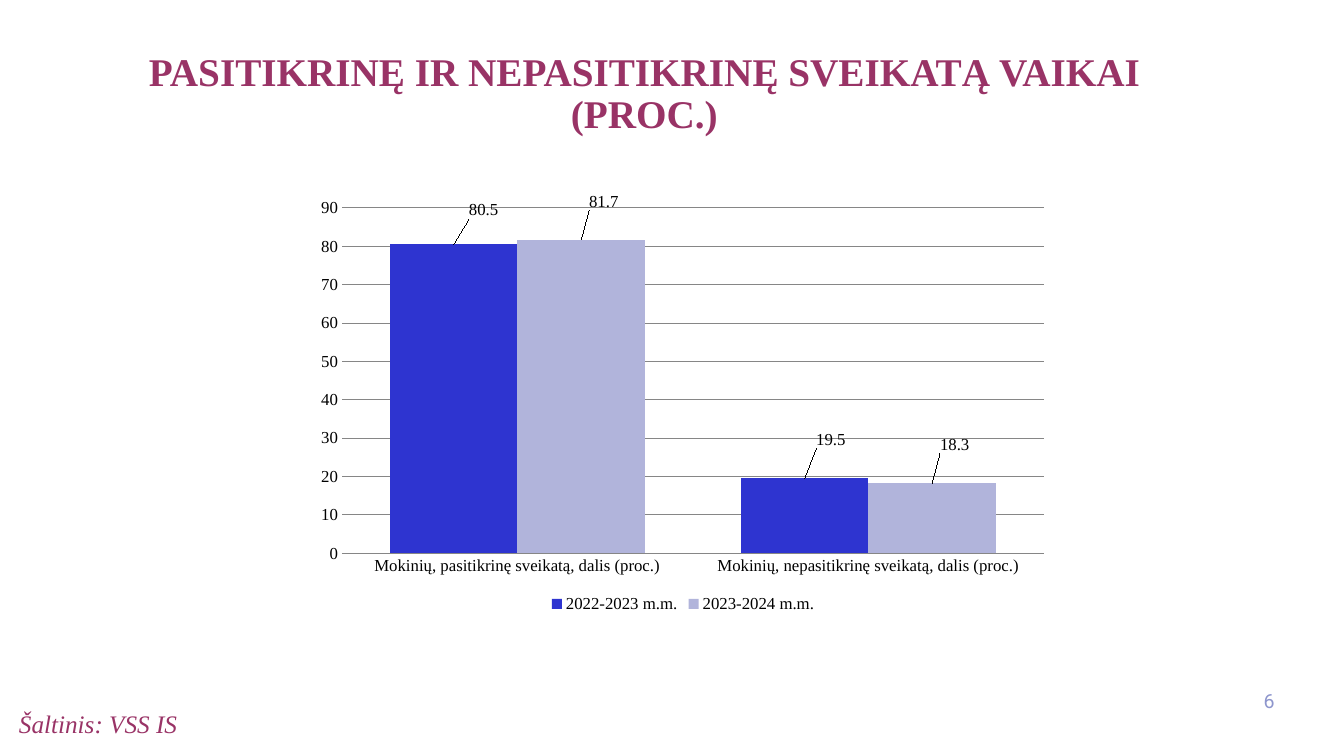
from lxml.etree import SubElement
from pptx import Presentation
from pptx.chart.data import CategoryChartData
from pptx.dml.color import RGBColor
from pptx.enum.chart import (XL_CHART_TYPE, XL_LABEL_POSITION,
                             XL_LEGEND_POSITION, XL_TICK_MARK)
from pptx.enum.text import PP_ALIGN
from pptx.oxml.ns import qn
from pptx.util import Inches, Pt

COLORS = {"plum": "993366", "page": "8E96CD", "text": "000000",
          "grid": "868686", "blue": "2E34D0", "pale": "B1B4DB"}
SERIF = "Times New Roman"
CATS = ["Mokinių, pasitikrinę sveikatą, dalis (proc.)",
        "Mokinių, nepasitikrinę sveikatą, dalis (proc.)"]
# name, colour, values, label shifts as shares of the chart size
SERIES = [
    ("2022-2023 m.m.", "blue", (80.5, 19.5), ((0.04, -0.05), (0.035, -0.06))),
    ("2023-2024 m.m.", "pale", (81.7, 18.3), ((0.03, -0.06), (0.03, -0.06))),
]


def rgb(name):
    return RGBColor.from_string(COLORS[name])


def add_text(slide, box, text, size, color, face=SERIF,
             align=PP_ALIGN.LEFT, bold=False, italic=False, spacing=1.0):
    frame = slide.shapes.add_textbox(*map(Inches, box)).text_frame
    frame.word_wrap = True
    para = frame.paragraphs[0]
    para.text = text
    para.alignment = align
    para.line_spacing = spacing
    font = para.font
    font.name, font.size = face, Pt(size)
    font.bold, font.italic = bold, italic
    font.color.rgb = rgb(color)


def make_layout(parent, index, **parts):
    """Put a manual layout into a chart element."""
    layout = SubElement(parent, qn("c:layout"))
    manual = SubElement(layout, qn("c:manualLayout"))
    for tag, val in parts.items():
        SubElement(manual, qn(f"c:{tag}")).set("val", str(val))
    parent.insert(index, layout)


def style_axes(chart):
    for axis in (chart.category_axis, chart.value_axis):
        axis.major_tick_mark = axis.minor_tick_mark = XL_TICK_MARK.NONE
    values = chart.value_axis
    values.minimum_scale, values.maximum_scale = 0, 90
    values.major_unit = 10
    values.format.line.fill.background()
    values.has_major_gridlines = True
    for holder in (chart.category_axis, values.major_gridlines):
        holder.format.line.color.rgb = rgb("grid")
        holder.format.line.width = Pt(0.75)


def style_series(series, color, shifts):
    series.format.fill.solid()
    series.format.fill.fore_color.rgb = rgb(color)
    series.data_labels.show_value = True
    for index, _ in enumerate(shifts):
        label = series.points[index].data_label
        label.position = XL_LABEL_POSITION.OUTSIDE_END
    labels = series.data_labels._element.findall(qn("c:dLbl"))
    for label, (x, y) in zip(labels, shifts):
        make_layout(label, 1, x=x, y=y)


def add_bars(slide, box):
    data = CategoryChartData(number_format="General")
    data.categories = CATS
    for name, _, values, _ in SERIES:
        data.add_series(name, values)
    chart = slide.shapes.add_chart(
        XL_CHART_TYPE.COLUMN_CLUSTERED, *map(Inches, box), data).chart
    chart.has_title = False
    chart.font.name, chart.font.size = SERIF, Pt(12)
    chart.font.color.rgb = rgb("text")
    chart.has_legend = True
    chart.legend.position = XL_LEGEND_POSITION.BOTTOM
    chart.legend.include_in_layout = False
    plot = chart.plots[0]
    plot.gap_width, plot.overlap = 75, 0
    plot.vary_by_categories = False
    style_axes(chart)
    for series, (_, color, _, shifts) in zip(plot.series, SERIES):
        style_series(series, color, shifts)
    area = chart._chartSpace.find(".//" + qn("c:plotArea"))
    for old in area.findall(qn("c:layout")):
        area.remove(old)
    make_layout(area, 0, layoutTarget="inner", xMode="edge", yMode="edge",
                x=0.047, y=0.041, w=0.932, h=0.81)


def main():
    deck = Presentation()
    deck.slide_width, deck.slide_height = Inches(13.33), Inches(7.5)
    slide = deck.slides.add_slide(deck.slide_layouts[6])
    add_text(slide, (-0.36, 0.47, 13.5, 1.38),
             "PASITIKRINĘ IR NEPASITIKRINĘ SVEIKATĄ VAIKAI\v(PROC.)",
             28, "plum", align=PP_ALIGN.CENTER, bold=True, spacing=0.9)
    add_bars(slide, (3.04, 1.89, 7.47, 4.23))
    add_text(slide, (0.09, 6.98, 6.3, 0.38), "Šaltinis: VSS IS",
             18, "plum", italic=True)
    add_text(slide, (12.22, 6.79, 0.52, 0.4), "6", 14, "page",
             face="Roboto", align=PP_ALIGN.RIGHT)
    deck.save("out.pptx")


if __name__ == "__main__":
    main()
